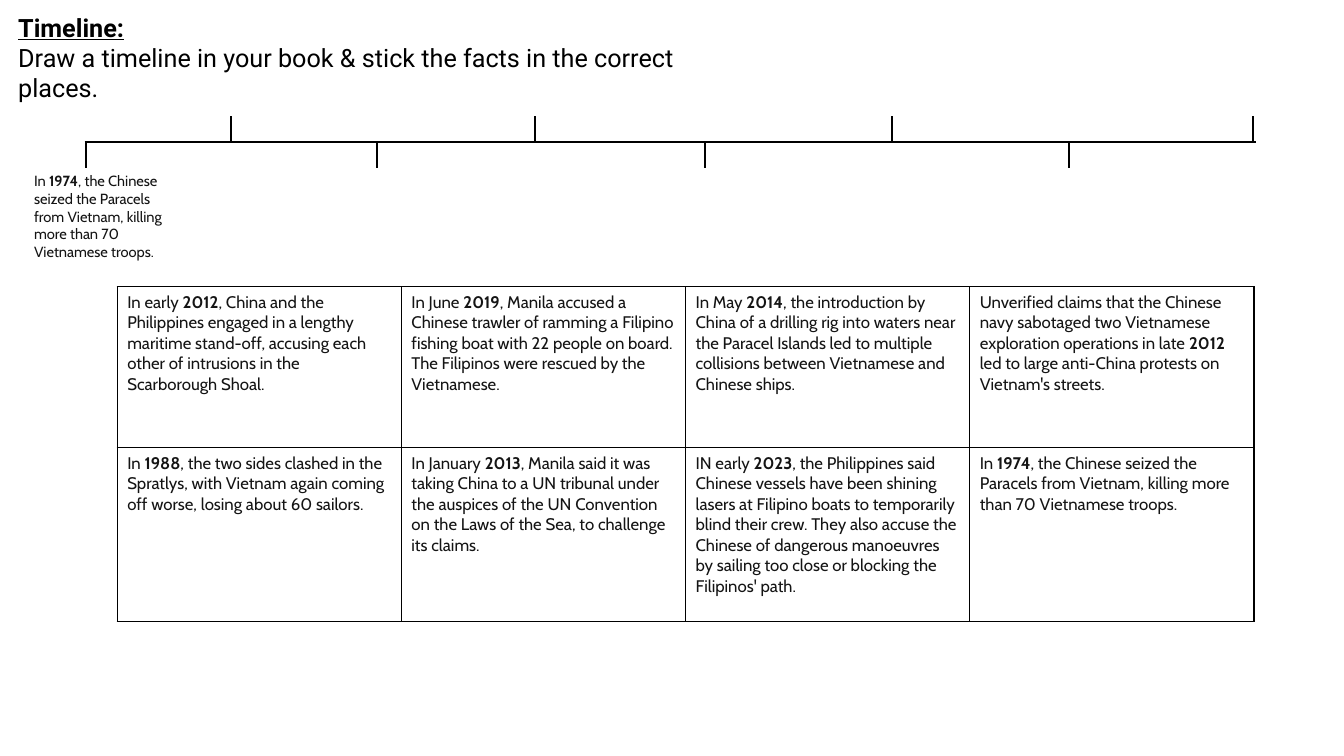
from lxml import etree
from pptx import Presentation
from pptx.dml.color import RGBColor
from pptx.enum.shapes import MSO_CONNECTOR
from pptx.enum.text import MSO_ANCHOR, MSO_AUTO_SIZE, PP_ALIGN
from pptx.oxml import parse_xml
from pptx.oxml.ns import qn
from pptx.util import Pt

STRAIGHT = MSO_CONNECTOR.STRAIGHT
TOP, LEFT, NO_FIT = MSO_ANCHOR.TOP, PP_ALIGN.LEFT, MSO_AUTO_SIZE.NONE

# Content: each fact is (before the year, year, after the year)
HEADING = "Timeline:"
TASK = "Draw a timeline in your book & stick the facts in the correct places."
PARACELS = ("In ", "1974", ", the Chinese seized the Paracels from Vietnam, "
            "killing more than 70 Vietnamese troops.")
FACTS = [
    [("In early ", "2012", ", China and the Philippines engaged in a lengthy maritime "
      "stand-off, accusing each other of intrusions in the Scarborough Shoal."),
     ("In June ", "2019", ", Manila accused a Chinese trawler of ramming a Filipino "
      "fishing boat with 22 people on board. The Filipinos were rescued by the Vietnamese."),
     ("In May ", "2014", ", the introduction by China of a drilling rig into waters near "
      "the Paracel Islands led to multiple collisions between Vietnamese and Chinese ships."),
     ("Unverified claims that the Chinese navy sabotaged two Vietnamese exploration "
      "operations in late ", "2012",
      " led to large anti-China protests on Vietnam's streets.")],
    [("In ", "1988", ", the two sides clashed in the Spratlys, with Vietnam again coming "
      "off worse, losing about 60 sailors."),
     ("In January ", "2013", ", Manila said it was taking China to a UN tribunal under the "
      "auspices of the UN Convention on the Laws of the Sea, to challenge its claims."),
     ("IN early ", "2023", ", the Philippines said Chinese vessels have been shining lasers "
      "at Filipino boats to temporarily blind their crew. They also accuse the Chinese of "
      "dangerous manoeuvres by sailing too close or blocking the Filipinos' path."),
     PARACELS],
]

# Layout, in points
AXIS_LEFT, AXIS_RIGHT, AXIS_Y = 60.5, 897, 101.5
TICK = 18.7
TICK_X = [61.2, 164.9, 269.3, 382.3, 503.3, 637.2, 763.9, 895]  # below, above, below ...
COL_WIDTH, ROW_HEIGHTS = 203, [115, 124]
BLACK, INK = "000000", "141414"


def color(hex_code):
    return RGBColor.from_string(hex_code)


def set_font(font, name, size, hex_code):
    font.name, font.size = name, Pt(size)
    font.color.rgb = color(hex_code)


def write_fact(tf, fact, size):
    p = tf.paragraphs[0]
    set_font(p.font, "Cabin", size, INK)
    for i, text in enumerate(fact):
        r = p.add_run()
        r.text = text
        r.font.bold = i == 1


def add_line(x1, y1, x2, y2):
    line = s.shapes.add_connector(STRAIGHT, Pt(x1), Pt(y1), Pt(x2), Pt(y2))
    line.line.color.rgb = color(BLACK)
    line.line.width = Pt(1.5)
    etree.SubElement(line._element.spPr, qn("a:effectLst"))


def add_borders(cell):
    tcPr = cell._tc.get_or_add_tcPr()
    for i, side in enumerate("LRTB"):
        tcPr.insert(i, parse_xml(
            f'<a:ln{side} xmlns:a="http://schemas.openxmlformats.org/drawingml/2006/main" '
            f'w="{Pt(1)}"><a:solidFill><a:srgbClr val="{BLACK}"/></a:solidFill></a:ln{side}>'))


prs = Presentation()
prs.slide_width, prs.slide_height = Pt(960), Pt(540)
s = prs.slides.add_slide(prs.slide_layouts[5])

# Heading and task
title = s.shapes.title
title.left, title.top, title.width, title.height = Pt(5.8), Pt(5), Pt(526), Pt(72)
tf = title.text_frame
tf.word_wrap, tf.auto_size, tf.vertical_anchor = True, NO_FIT, TOP
tf.text = f"{HEADING}\n{TASK}"
for p in tf.paragraphs:
    p.alignment = LEFT
    set_font(p.font, "Roboto", 18, BLACK)
heading_font = tf.paragraphs[0].font
heading_font.bold = heading_font.underline = True

# Table of facts
table = s.shapes.add_table(len(FACTS), len(FACTS[0]), Pt(83.7), Pt(204.8),
                           Pt(COL_WIDTH * len(FACTS[0])), Pt(sum(ROW_HEIGHTS))).table
table.first_row = table.horz_banding = False
for col in table.columns:
    col.width = Pt(COL_WIDTH)
for row, height, facts in zip(table.rows, ROW_HEIGHTS, FACTS):
    row.height = Pt(height)
    for cell, fact in zip(row.cells, facts):
        cell.fill.background()
        add_borders(cell)
        write_fact(cell.text_frame, fact, 12)

# Timeline with ticks alternating below and above
add_line(AXIS_LEFT, AXIS_Y, AXIS_RIGHT, AXIS_Y)
for i, x in enumerate(TICK_X):
    add_line(x, AXIS_Y, x, AXIS_Y + (-TICK if i % 2 else TICK))

# First fact, already placed
box = s.shapes.add_textbox(Pt(17.3), Pt(119.5), Pt(113), Pt(70.6))
box.text_frame.word_wrap = True
write_fact(box.text_frame, PARACELS, 10.5)

prs.save("out.pptx")
